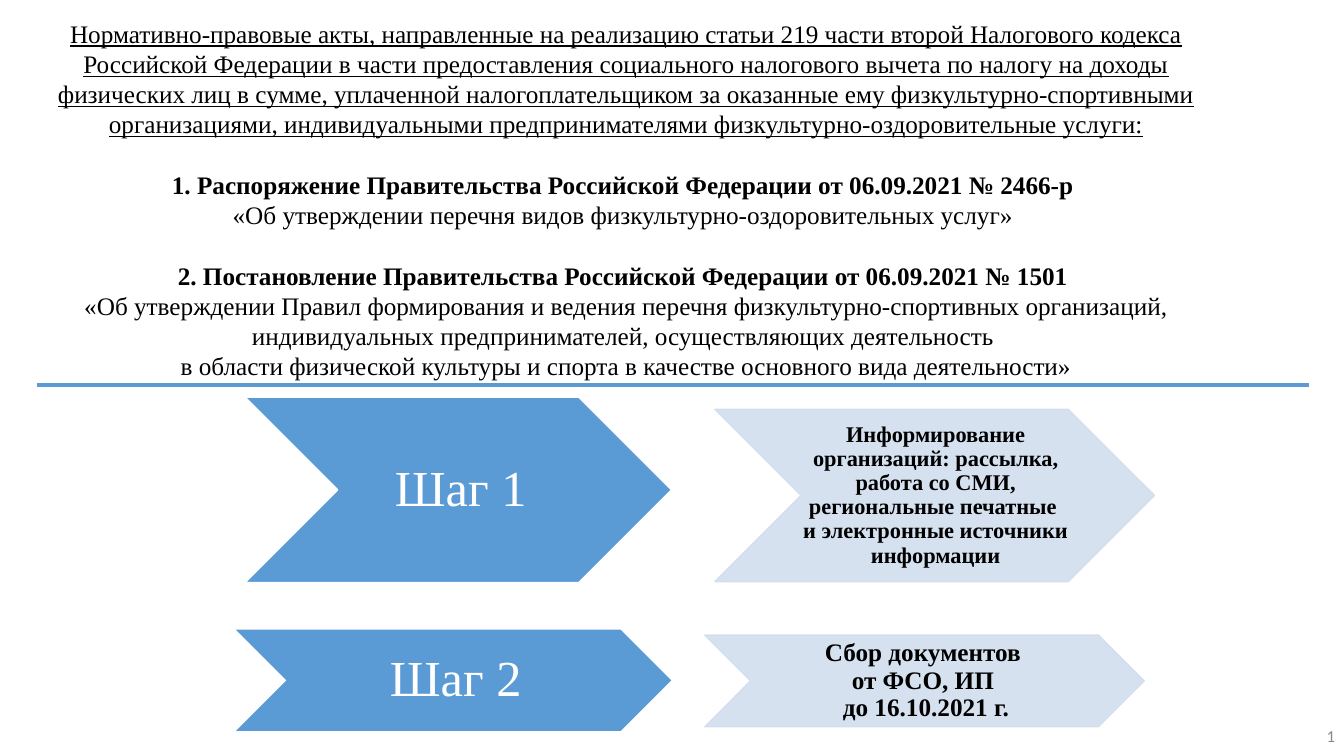
from lxml import etree
from pptx import Presentation
from pptx.dml.color import RGBColor
from pptx.enum import shapes, text
from pptx.oxml import ns
from pptx.util import Inches, Pt

COLORS = {"blue": "5B9BD5", "pale": "D2DEEF", "white": "FFFFFF",
          "black": "000000", "gray": "898989"}
SERIF = "Times New Roman"


def color(name):
    return RGBColor.from_string(COLORS[name])


def format_paragraph(paragraph, size, color_name, bold=False):
    paragraph.alignment = text.PP_ALIGN.CENTER
    paragraph.font.name = SERIF
    paragraph.font.size = Pt(size)
    paragraph.font.bold = bold
    paragraph.font.color.rgb = color(color_name)


presentation = Presentation()
presentation.slide_width = Inches(13.33)
presentation.slide_height = Inches(7.5)
slide = presentation.slides.add_slide(presentation.slide_layouts[6])

# Slide number
number_box = slide.shapes.add_textbox(Inches(9.42), Inches(7.1), Inches(3.92), Inches(0.4))
number_box.text_frame.vertical_anchor = text.MSO_ANCHOR.MIDDLE
paragraph = number_box.text_frame.paragraphs[0]
paragraph.alignment = text.PP_ALIGN.RIGHT
run = paragraph.add_run()
run.text = "2"
run.font.name = "Calibri"
run.font.size = Pt(12)
run.font.color.rgb = color("gray")
# Turn the run into a slide number field
run._r.tag = ns.qn("a:fld")
run._r.set("id", "{B6F15528-21DE-4FAA-801E-634DDDAF4B2B}")
run._r.set("type", "slidenum")

# Steps: left, top, width, height, fill, opacity, size, bold, left and vertical inset, lines
steps = [
    (2.43, 3.94, 4.23, 1.84, "blue", 100, 36, False, 0.05, 0.03, ["Шаг 1"]),
    (7.09, 4.06, 4.36, 1.71, "pale", 90, 16, True, 0.02, 0.01,
     ["Информирование организаций: рассылка, работа со СМИ, "
      "региональные печатные \vи электронные источники информации"]),
    (2.32, 6.24, 4.35, 1.02, "blue", 100, 36, False, 0.05, 0.03, ["Шаг 2"]),
    (6.99, 6.3, 4.36, 0.91, "pale", 90, 18, True, 0.03, 0.01,
     ["Сбор документов ", "от ФСО, ИП ", "до 16.10.2021 г."]),
]
for left, top, width, height, fill, opacity, size, bold, inset, margin, lines in steps:
    chevron = slide.shapes.add_shape(shapes.MSO_SHAPE.CHEVRON, Inches(left), Inches(top),
                                     Inches(width), Inches(height))
    chevron.shadow.inherit = False
    chevron.fill.solid()
    chevron.fill.fore_color.rgb = color(fill)
    chevron.line.color.rgb = color("white" if fill == "blue" else fill)
    chevron.line.width = Pt(1)
    if opacity < 100:
        for element in chevron._element.spPr.iter(ns.qn("a:srgbClr")):
            etree.SubElement(element, ns.qn("a:alpha"), val=str(opacity * 1000))
    frame = chevron.text_frame
    frame.word_wrap = True
    frame.vertical_anchor = text.MSO_ANCHOR.MIDDLE
    frame.margin_left, frame.margin_right = Inches(inset), 0
    frame.margin_top = frame.margin_bottom = Inches(margin)
    for index, line in enumerate(lines):
        paragraph = frame.add_paragraph() if index else frame.paragraphs[0]
        paragraph.text = line
        paragraph.line_spacing = 0.9
        format_paragraph(paragraph, size, "white" if fill == "blue" else "black", bold)

# Legal acts: text, bold, underline, space after
acts = [
    ("Нормативно-правовые акты, направленные на реализацию статьи 219 части второй "
     "Налогового кодекса Российской Федерации в части предоставления социального "
     "налогового вычета по налогу на доходы физических лиц в сумме, уплаченной "
     "налогоплательщиком за оказанные ему физкультурно-спортивными организациями, "
     "индивидуальными предпринимателями физкультурно-оздоровительные услуги:",
     False, True, 21.6),
    ("1. Распоряжение Правительства Российской Федерации от 06.09.2021 № 2466-р ",
     True, False, 0),
    ("«Об утверждении перечня видов физкультурно-оздоровительных услуг» ",
     False, False, 21.6),
    ("2. Постановление Правительства Российской Федерации от 06.09.2021 № 1501 ",
     True, False, 0),
    ("«Об утверждении Правил формирования и ведения перечня физкультурно-спортивных "
     "организаций, индивидуальных предпринимателей, осуществляющих деятельность \v"
     "в области физической культуры и спорта в качестве основного вида деятельности»",
     False, False, 0),
]
acts_box = slide.shapes.add_textbox(Inches(0.21), Inches(0.13), Inches(12), Inches(4.04))
acts_box.text_frame.word_wrap = True
for index, (act, bold, underline, space_after) in enumerate(acts):
    frame = acts_box.text_frame
    paragraph = frame.add_paragraph() if index else frame.paragraphs[0]
    paragraph.text = act
    paragraph.space_after = Pt(space_after)
    format_paragraph(paragraph, 18, "black", bold)
    paragraph.font.underline = underline

divider = slide.shapes.add_connector(shapes.MSO_CONNECTOR.STRAIGHT, Inches(0.37), Inches(3.82),
                                     Inches(12.98), Inches(3.82))
divider.line.color.rgb = color("blue")
divider.line.width = Pt(2.5)
etree.SubElement(divider._element.spPr, ns.qn("a:effectLst"))

presentation.save("out.pptx")
